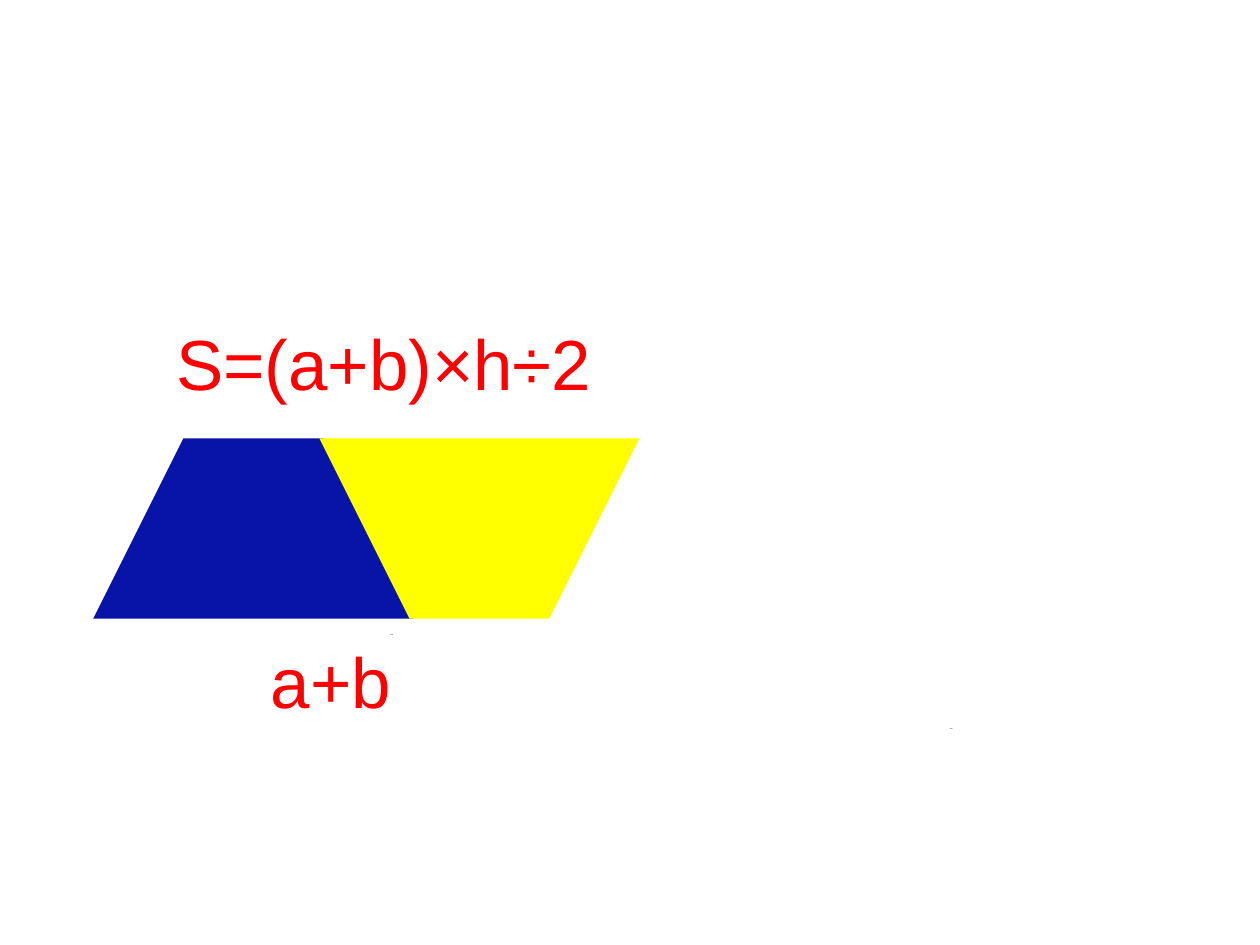
"""Build a slide that joins two trapezoids to show the area formula."""
from dataclasses import dataclass

from pptx import Presentation
from pptx import util as u
from pptx.dml import color
from pptx.enum import shapes, text


@dataclass(frozen=True)
class Theme:
    font: str = "Arial"
    red: str = "FF0000"
    black: str = "000000"
    blue: str = "0813A8"
    yellow: str = "FFFF00"
    large: float = 40.5
    tiny: float = 1


THEME = Theme()
WIDTH, HEIGHT, SLANT = 2.54, 1.43, 0.5
LEFT, TOP = 0.74, 3.48


def add_label(slide, words, box, size, tint):
    frame = slide.shapes.add_textbox(*map(u.Inches, box)).text_frame
    frame.word_wrap = True
    frame.auto_size = text.MSO_AUTO_SIZE.SHAPE_TO_FIT_TEXT
    para = frame.paragraphs[0]
    para.text = words
    para.font.name = THEME.font
    para.font.size = u.Pt(size)
    para.font.color.rgb = color.RGBColor.from_string(tint)


def add_trapezoid(slide, left, tint, flip=False):
    box = map(u.Inches, (left, TOP, WIDTH, HEIGHT))
    shape = slide.shapes.add_shape(shapes.MSO_SHAPE.TRAPEZOID, *box)
    shape.adjustments[0] = SLANT
    shape.fill.solid()
    shape.fill.fore_color.rgb = color.RGBColor.from_string(tint)
    shape.line.fill.background()
    shape.shadow.inherit = False
    if flip:
        shape.element.spPr.xfrm.set("flipV", "1")


def main():
    deck = Presentation()
    deck.slide_width, deck.slide_height = u.Inches(10), u.Inches(7.5)
    slide = deck.slides.add_slide(deck.slide_layouts[6])

    add_label(slide, "S=(a+b)×h÷2", (1.3, 2.49, 6.68, 0.78), THEME.large, THEME.red)
    add_trapezoid(slide, LEFT, THEME.blue)
    add_trapezoid(slide, LEFT + WIDTH - SLANT * HEIGHT - 0.03, THEME.yellow, flip=True)
    for left, top in ((3, 4.98), (7.44, 5.73)):
        add_label(slide, "a+b", (left, top, 0.48, 0.12), THEME.tiny, THEME.black)
    add_label(slide, "a+b", (2.05, 5.01, 1.51, 0.78), THEME.large, THEME.red)

    deck.save("out.pptx")


if __name__ == "__main__":
    main()
